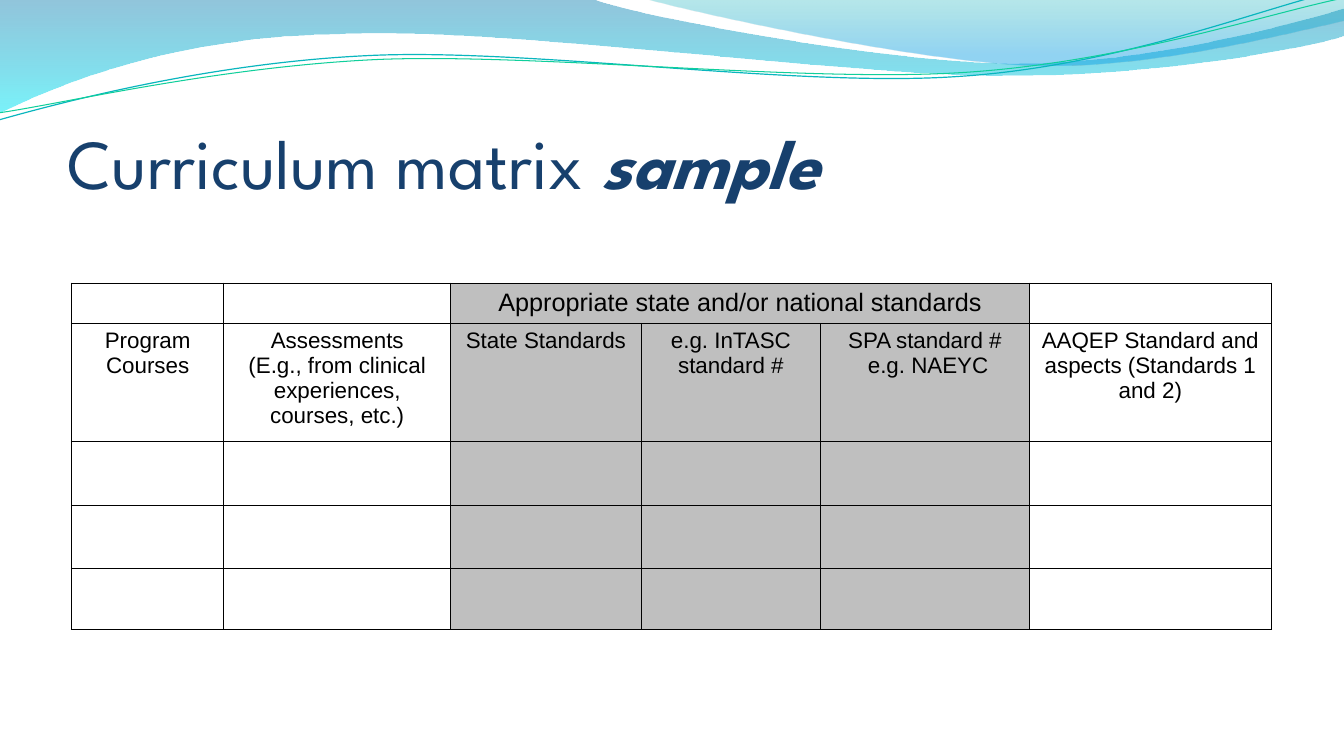
from math import cos, radians, sin

from lxml import etree
from pptx import Presentation
from pptx.dml.color import RGBColor
from pptx.enum.text import MSO_ANCHOR, PP_ALIGN
from pptx.oxml import parse_xml
from pptx.util import Inches, Pt

LEFT, CENTER = PP_ALIGN.LEFT, PP_ALIGN.CENTER
BOTTOM = MSO_ANCHOR.BOTTOM
NS = "http://schemas.openxmlformats.org/drawingml/2006/main"

# A point pair is a straight line; six numbers are a cubic curve.
WAVES = [
    ([(0, 0), (5.87, -0.01), (6.34, 0.17, 8.84, 0.63, 10.11, 0.63),
      (11.37, 0.63, 12.77, 0.26, 13.33, 0.09), (13.34, 0.36),
      (13.11, 0.44, 11.59, 0.76, 9.94, 0.75),
      (8.29, 0.75, 5.09, 0.28, 3.43, 0.34),
      (1.72, 0.36, 0.61, 0.83, -0.02, 1.13), (0, 0)],
     [(0, "0079AD", 43), (100, "00E9F7", 53)]),
    ([(6.38, -0.01), (6.79, 0.11, 9.09, 0.62, 10.25, 0.65),
      (11.4, 0.69, 12.82, 0.32, 13.33, 0.21), (13.33, 0), (6.38, -0.01)],
     [(0, "00ABB4", 28), (80, "0099E4", 43), (100, "0099E4", 43)]),
]
TILT = 2.7
STRANDS = [
    ([(-0.01, 1.19), (0.63, 1.01, 2.1, 0.62, 3.69, 0.55),
      (5.27, 0.48, 7.89, 0.87, 9.49, 0.76),
      (11.1, 0.66, 12.51, 0.08, 13.3, -0.1)], (6.65, 0.58), "09B6BE", 0.85),
    ([(-0.01, 1.12), (0.62, 1.03, 2.18, 0.66, 3.77, 0.59),
      (5.37, 0.53, 7.96, 0.82, 9.55, 0.72),
      (11.14, 0.62, 12.55, 0.14, 13.33, -0.02)], (6.67, 0.59), "10CF9B", 0.75),
]
TITLE = [("Curriculum matrix ", False), ("sample", True)]
BANNER = "Appropriate state and/or national standards"
HEADS = [
    ["Program Courses"],
    ["Assessments", "(E.g., from clinical experiences, courses, etc.)"],
    ["State Standards"],
    ["e.g. InTASC standard #"],
    ["SPA standard #", " e.g. NAEYC"],
    ["AAQEP Standard and aspects (Standards 1 and 2)"],
]
COLS = [1.51, 2.25, 1.89, 1.78, 2.07, 2.4]
ROWS = [0.31, 0.83, 0.64, 0.62, 0.61]
GREY = range(2, 5)


def color(code):
    return RGBColor.from_string(code)


def write(frame, lines, size, font="Arial", ink="000000", align=CENTER):
    """Fill a text frame; each line is a list of (text, strong) runs."""
    frame.word_wrap = True
    for i, line in enumerate(lines):
        para = frame.paragraphs[0] if i == 0 else frame.add_paragraph()
        para.alignment = align
        for text, strong in line:
            run = para.add_run()
            run.text = text
            run.font.name, run.font.size = font, Pt(size)
            run.font.bold = run.font.italic = strong
            run.font.color.rgb = color(ink)


def turn(parts, mid):
    """Rotate every point clockwise by TILT about mid."""
    c, s = cos(radians(TILT)), sin(radians(TILT))
    turned = []
    for part in parts:
        flat = []
        for x, y in zip(part[::2], part[1::2]):
            dx, dy = x - mid[0], y - mid[1]
            flat += [mid[0] + dx * c - dy * s, mid[1] + dx * s + dy * c]
        turned.append(flat)
    return turned


def draw(slide, parts, close):
    """Lay all points as lines, then join each curve's three into one."""
    spots = [(Inches(x), Inches(y)) for part in parts
             for x, y in zip(part[::2], part[1::2])]
    pen = slide.shapes.build_freeform(*spots[0])
    pen.add_line_segments(spots[1:], close=close)
    shape = pen.convert_to_shape()
    lines = iter(list(shape.element.iter(f"{{{NS}}}lnTo")))
    for part in parts[1:]:
        first = next(lines)
        if len(part) == 6:
            curve = etree.Element(f"{{{NS}}}cubicBezTo")
            first.addprevious(curve)
            for line in (first, next(lines), next(lines)):
                curve.append(line[0])
                line.getparent().remove(line)
    shape.shadow.inherit = False
    shape.fill.background()
    return shape


def shade(shape, stops):
    """Give a shape a top-to-bottom gradient with opacity per stop."""
    marks = "".join(
        f'<a:gs pos="{pos * 1000}"><a:srgbClr val="{code}">'
        f'<a:alpha val="{solid * 1000}"/></a:srgbClr></a:gs>'
        for pos, code, solid in stops)
    grad = parse_xml(f'<a:gradFill xmlns:a="{NS}" rotWithShape="1"><a:gsLst>{marks}'
                     '</a:gsLst><a:lin ang="5400000" scaled="0"/></a:gradFill>')
    props = shape.element.spPr
    props.replace(props.find(f"{{{NS}}}noFill"), grad)


def border(cell):
    props = cell._tc.get_or_add_tcPr()
    for i, side in enumerate(("lnL", "lnR", "lnT", "lnB")):
        line = etree.Element(f"{{{NS}}}{side}", w=str(Pt(1)))
        fill = etree.SubElement(line, f"{{{NS}}}solidFill")
        etree.SubElement(fill, f"{{{NS}}}srgbClr", val="000000")
        props.insert(i, line)


def add_matrix(slide):
    table = slide.shapes.add_table(
        len(ROWS), len(COLS), Inches(0.71), Inches(2.81),
        Inches(sum(COLS)), Inches(sum(ROWS))).table
    table.first_row = table.horz_banding = False
    for col, width in zip(table.columns, COLS):
        col.width = Inches(width)
    for row, height in zip(table.rows, ROWS):
        row.height = Inches(height)
    for r in range(len(ROWS)):
        for c in range(len(COLS)):
            cell = table.cell(r, c)
            if c in GREY:
                cell.fill.solid()
                cell.fill.fore_color.rgb = color("BFBFBF")
            else:
                cell.fill.background()
            border(cell)
            if r == 1:
                lines = [[(text, False)] for text in HEADS[c]]
                write(cell.text_frame, lines, 16)
            elif (r, c) != (0, GREY[0]):
                cell.margin_top = cell.margin_bottom = 0
    banner = table.cell(0, GREY[0])
    banner.merge(table.cell(0, GREY[-1]))
    write(banner.text_frame, [[(BANNER, False)]], 18)


def main():
    deck = Presentation()
    deck.slide_width, deck.slide_height = Inches(13.33), Inches(7.5)
    slide = deck.slides.add_slide(deck.slide_layouts[6])
    for parts, stops in WAVES:
        wave = draw(slide, parts, True)
        wave.line.fill.background()
        shade(wave, stops)
    for parts, mid, ink, width in STRANDS:
        strand = draw(slide, turn(parts, mid), False)
        strand.rotation = 360 - TILT
        strand.line.color.rgb = color(ink)
        strand.line.width = Pt(width)
    frame = slide.shapes.add_textbox(
        Inches(0.67), Inches(0.77), Inches(12.11), Inches(1.25)).text_frame
    frame.margin_left = frame.margin_right = frame.margin_bottom = 0
    frame.vertical_anchor = BOTTOM
    write(frame, [TITLE], 50, font="League Spartan", ink="17406D", align=LEFT)
    add_matrix(slide)
    deck.save("out.pptx")


if __name__ == "__main__":
    main()
